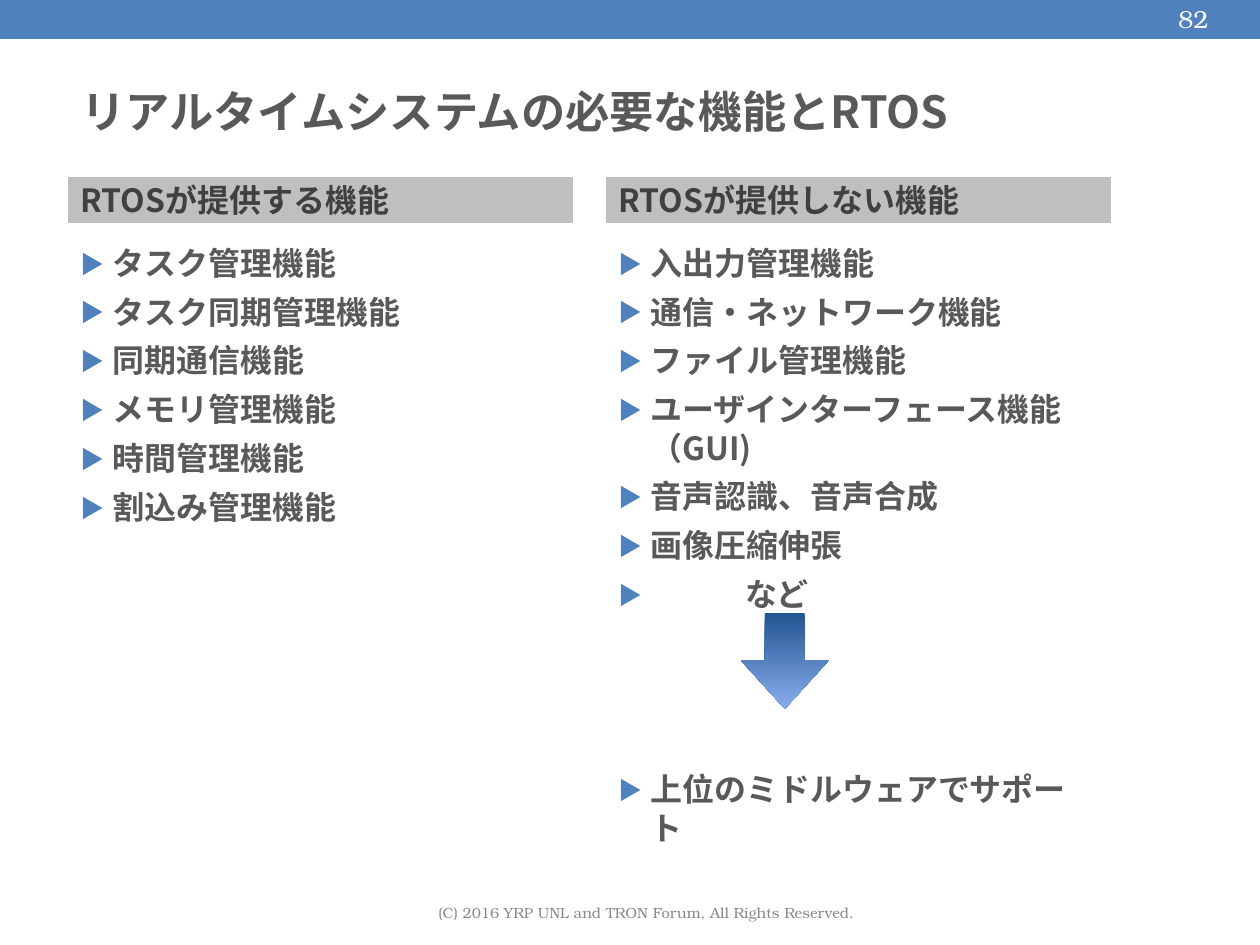
"""Build the slide comparing functions an RTOS does and does not provide."""
import pptx
import pptx.dml.color
import pptx.enum.shapes
import pptx.enum.text
import pptx.oxml.ns
import pptx.util
from lxml import etree

Inches = pptx.util.Inches
Pt = pptx.util.Pt
RGBColor = pptx.dml.color.RGBColor
Align = pptx.enum.text.PP_ALIGN
Anchor = pptx.enum.text.MSO_ANCHOR
Shape = pptx.enum.shapes.MSO_SHAPE
qn = pptx.oxml.ns.qn

BLUE = RGBColor(0x4F, 0x81, 0xBD)
ARROW_DARK = RGBColor(0x23, 0x55, 0x91)
ARROW_LIGHT = RGBColor(0x88, 0xAD, 0xED)
SILVER = RGBColor(0xBF, 0xBF, 0xBF)
HEADING_GRAY = RGBColor(0x40, 0x40, 0x40)
TEXT_GRAY = RGBColor(0x59, 0x59, 0x59)
FOOTER_GRAY = RGBColor(0x89, 0x89, 0x89)
WHITE = RGBColor(0xFF, 0xFF, 0xFF)
GOTHIC = "Noto Sans CJK JP"
SERIF = "TeX Gyre Bonum"

ITEM_INDENT = 0.36
ETC_INDENT = 1.43
ITEM_GAP = 8.5
LINE_HEIGHT = 31.2
SUPPORT_GAP = ITEM_GAP + 3 * (ITEM_GAP + LINE_HEIGHT)

PROVIDED = ["タスク管理機能", "タスク同期管理機能", "同期通信機能",
            "メモリ管理機能", "時間管理機能", "割込み管理機能"]
NOT_PROVIDED = ["入出力管理機能", "通信・ネットワーク機能", "ファイル管理機能",
                "ユーザインターフェース機能（GUI)", "音声認識、音声合成", "画像圧縮伸張"]
ETC = "など"
SUPPORT = "上位のミドルウェアでサポート"


def place(box, left, top, width, height):
    box.left, box.top = Inches(left), Inches(top)
    box.width, box.height = Inches(width), Inches(height)


def prepare_frame(box, anchor, side=0.14, vertical=0.07):
    frame = box.text_frame
    frame.word_wrap = True
    frame.auto_size = pptx.enum.text.MSO_AUTO_SIZE.NONE
    frame.vertical_anchor = anchor
    frame.margin_left = frame.margin_right = Inches(side)
    frame.margin_top = frame.margin_bottom = Inches(vertical)
    return frame


def add_text(para, text, size, color, font=GOTHIC, bold=True):
    span = para.add_run()
    span.text = text
    span.font.size = Pt(size)
    span.font.bold = bold
    span.font.color.rgb = color
    span.font.name = font
    etree.SubElement(span.font._element, qn("a:ea"), typeface=font)


def write_line(box, text, size, color, align=Align.LEFT, font=GOTHIC, bold=True, vertical=0.07):
    para = prepare_frame(box, Anchor.MIDDLE, vertical=vertical).paragraphs[0]
    para.alignment = align
    para.space_before = Pt(0)
    add_text(para, text, size, color, font, bold)


def add_label(slide, bounds, text, size, color, align):
    box = slide.shapes.add_textbox(*map(Inches, bounds))
    write_line(box, text, size, color, align, SERIF, False)


def add_bullet(para, indent):
    properties = para._p.get_or_add_pPr()
    properties.set("marL", str(Inches(indent)))
    properties.set("indent", str(-Inches(indent)))
    color = etree.SubElement(properties, qn("a:buClr"))
    etree.SubElement(color, qn("a:srgbClr"), val=str(BLUE))
    etree.SubElement(properties, qn("a:buSzPct"), val="75000")
    etree.SubElement(properties, qn("a:buFont"), typeface=GOTHIC)
    etree.SubElement(properties, qn("a:buChar"), char="▶")


def add_item(frame, text, indent=ITEM_INDENT, gap=ITEM_GAP):
    first = not frame.paragraphs[0].runs
    para = frame.paragraphs[0] if first else frame.add_paragraph()
    add_bullet(para, indent)
    para.line_spacing = Pt(LINE_HEIGHT)
    para.space_before = Pt(0 if first else gap)
    add_text(para, text, 26, TEXT_GRAY)


def fill_column(slide, heading_index, left, heading, items):
    header = slide.placeholders[heading_index]
    place(header, left, 2.01, 5.7, 0.5)
    header.fill.solid()
    header.fill.fore_color.rgb = SILVER
    header.line.color.rgb = SILVER
    header.line.width = Pt(0.75)
    write_line(header, heading, 26, HEADING_GRAY, vertical=0)

    body = slide.placeholders[heading_index + 1]
    place(body, left, 2.68, 5.7, 6.87)
    frame = prepare_frame(body, Anchor.TOP)
    frame.margin_right = Inches(0.2)
    for item in items:
        add_item(frame, item)
    return frame


def add_top_band(slide):
    band = slide.shapes.add_shape(Shape.RECTANGLE, 0, 0, Inches(14.24), Inches(0.43))
    band.shadow.inherit = False
    band.fill.solid()
    band.fill.fore_color.rgb = BLUE
    band.line.color.rgb = BLUE
    band.line.width = Pt(2)


def add_down_arrow(slide):
    arrow = slide.shapes.add_shape(
        Shape.DOWN_ARROW, Inches(8.37), Inches(6.93), Inches(1), Inches(1.08))
    arrow.adjustments[0] = 0.45
    arrow.adjustments[1] = 0.55
    arrow.shadow.inherit = False
    arrow.line.fill.background()
    arrow.fill.gradient()
    arrow.fill.gradient_angle = 270
    for stop, color in zip(arrow.fill.gradient_stops, (ARROW_DARK, ARROW_LIGHT)):
        stop.color.rgb = color


def main():
    deck = pptx.Presentation()
    deck.slide_width, deck.slide_height = Inches(14.24), Inches(10.68)
    slide = deck.slides.add_slide(deck.slide_layouts.get_by_name("Comparison"))

    add_top_band(slide)
    title = slide.shapes.title
    place(title, 0.78, 0.75, 11.77, 1.01)
    write_line(title, "リアルタイムシステムの必要な機能とRTOS", 36, TEXT_GRAY)

    fill_column(slide, 1, 0.77, "RTOSが提供する機能", PROVIDED)
    frame = fill_column(slide, 3, 6.85, "RTOSが提供しない機能", NOT_PROVIDED)
    add_item(frame, ETC, indent=ETC_INDENT)
    add_item(frame, SUPPORT, gap=SUPPORT_GAP)

    add_down_arrow(slide)
    add_label(slide, (12.94, 0, 0.86, 0.43), "82", 20, WHITE, Align.RIGHT)
    add_label(slide, (0.79, 10.12, 13.03, 0.39),
              "(C) 2016 YRP UNL and TRON Forum, All Rights Reserved.",
              12, FOOTER_GRAY, Align.CENTER)
    deck.save("out.pptx")


if __name__ == "__main__":
    main()
